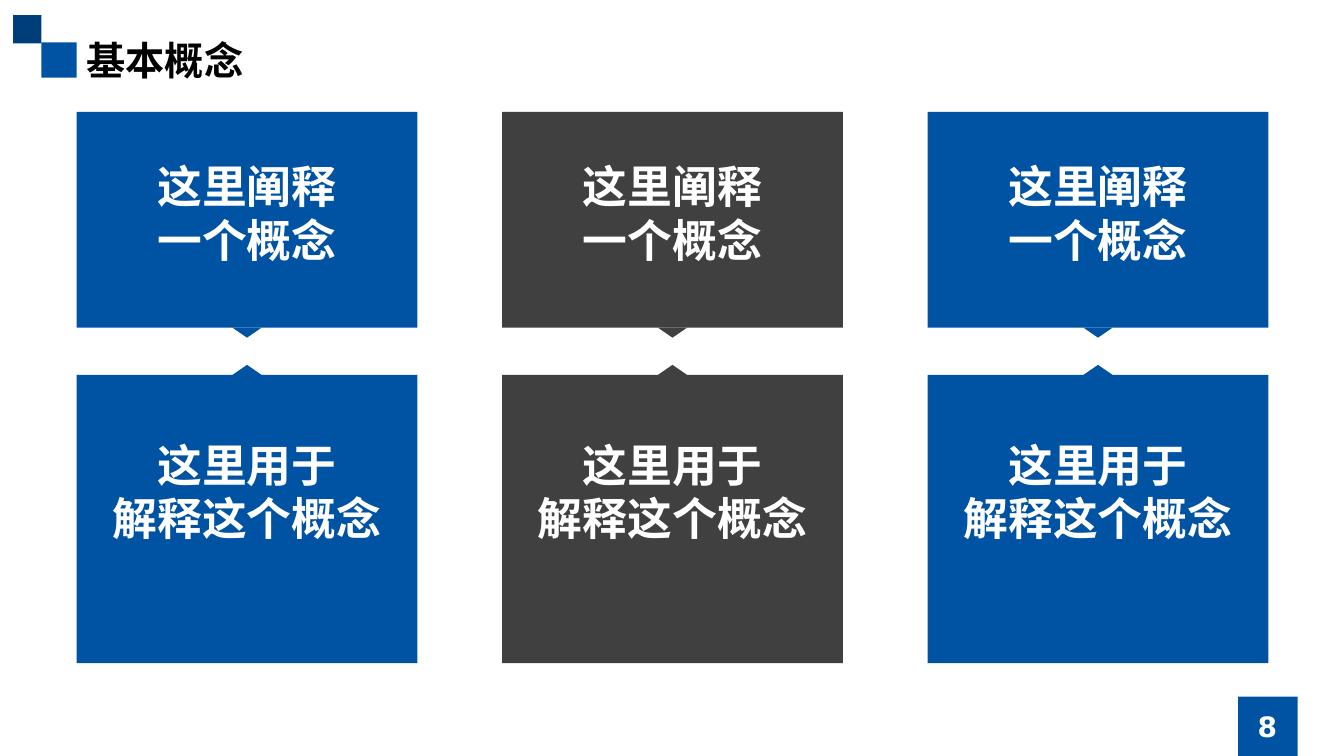
"""Build the basic concepts slide: three concept cards above three explanation cards."""
from dataclasses import dataclass

import pptx
import pptx.dml.color
import pptx.enum.shapes
import pptx.enum.text
import pptx.oxml.ns
import pptx.oxml.xmlchemy
import pptx.slide
import pptx.text.text
import pptx.util
from lxml import etree

Inches = pptx.util.Inches
RGBColor = pptx.dml.color.RGBColor
Shape = pptx.enum.shapes.MSO_SHAPE
Align = pptx.enum.text.PP_ALIGN
Anchor = pptx.enum.text.MSO_ANCHOR

BLUE = RGBColor(0x00, 0x53, 0xA3)
NAVY = RGBColor(0x00, 0x3E, 0x7A)
GRAY = RGBColor(0x40, 0x40, 0x40)
WHITE = RGBColor(0xFF, 0xFF, 0xFF)
BLACK = RGBColor(0x00, 0x00, 0x00)
CHINESE_FONT = "Noto Sans CJK SC"

COLUMN_LEFT, COLUMN_STEP, CARD_WIDTH = 0.76, 4.22, 3.38
POINTER_WIDTH, POINTER_HEIGHT = 0.29, 0.1
COLUMN_COLORS = (BLUE, GRAY, BLUE)


@dataclass(frozen=True)
class Box:
    left: float
    top: float
    width: float
    height: float

    def lengths(self) -> tuple[int, int, int, int]:
        return (Inches(self.left), Inches(self.top),
                Inches(self.width), Inches(self.height))


@dataclass(frozen=True)
class CardRow:
    top: float
    height: float
    pointer_top: float
    pointer_rotation: int
    text_top: float
    lines: tuple[str, ...]


@dataclass(frozen=True)
class TextStyle:
    size: int
    font: str
    color: RGBColor
    alignment: Align = Align.CENTER
    anchor: Anchor = Anchor.TOP


ROWS = (
    CardRow(1.11, 2.14, 3.25, 180, 1.53, ("这里阐释", "一个概念")),
    CardRow(3.72, 2.86, 3.62, 0, 4.29, ("这里用于", "解释这个概念")),
)
TITLE_STYLE = TextStyle(28, CHINESE_FONT, BLACK, Align.LEFT)
CARD_STYLE = TextStyle(32, "Arial", WHITE)
NUMBER_STYLE = TextStyle(20, "DejaVu Sans", WHITE, anchor=Anchor.MIDDLE)


def add_block(slide: pptx.slide.Slide, box: Box, color: RGBColor,
              kind: Shape = Shape.RECTANGLE, rotation: int = 0) -> None:
    shape = slide.shapes.add_shape(kind, *box.lengths())
    shape.rotation = rotation
    shape.shadow.inherit = False
    shape.fill.solid()
    shape.fill.fore_color.rgb = color
    shape.line.fill.background()


def write_lines(frame: pptx.text.text.TextFrame, lines: tuple[str, ...],
                style: TextStyle) -> None:
    frame.text = "\n".join(lines)
    frame.word_wrap = True
    frame.auto_size = pptx.enum.text.MSO_AUTO_SIZE.NONE
    frame.vertical_anchor = style.anchor
    for paragraph in frame.paragraphs:
        paragraph.alignment = style.alignment
        font = paragraph.font
        font.size = pptx.util.Pt(style.size)
        font.bold = True
        font.color.rgb = style.color
        font.name = style.font
        latin = paragraph._p.find(".//" + pptx.oxml.ns.qn("a:latin"))
        east_asian = etree.Element(pptx.oxml.ns.qn("a:ea"), typeface=CHINESE_FONT)
        latin.addnext(east_asian)


def add_text(slide: pptx.slide.Slide, box: Box, lines: tuple[str, ...],
             style: TextStyle) -> None:
    text_box = slide.shapes.add_textbox(*box.lengths())
    write_lines(text_box.text_frame, lines, style)


def add_title(slide: pptx.slide.Slide, box: Box, text: str) -> None:
    title = slide.shapes.title
    title.left, title.top, title.width, title.height = box.lengths()
    write_lines(title.text_frame, (text,), TITLE_STYLE)


def add_card(slide: pptx.slide.Slide, row: CardRow, left: float, color: RGBColor) -> None:
    pointer_left = left + (CARD_WIDTH - POINTER_WIDTH) / 2
    pointer = Box(pointer_left, row.pointer_top, POINTER_WIDTH, POINTER_HEIGHT)
    add_block(slide, Box(left, row.top, CARD_WIDTH, row.height), color)
    add_block(slide, pointer, color, Shape.ISOSCELES_TRIANGLE, row.pointer_rotation)
    add_text(slide, Box(left, row.text_top, CARD_WIDTH, 1.18), row.lines, CARD_STYLE)


def main() -> None:
    presentation = pptx.Presentation()
    presentation.slide_width = Inches(13.33)
    presentation.slide_height = Inches(7.5)
    slide = presentation.slides.add_slide(presentation.slide_layouts.get_by_name("Title Only"))

    add_title(slide, Box(0.76, 0.31, 5.91, 0.57), "基本概念")
    add_block(slide, Box(0.41, 0.42, 0.35, 0.35), BLUE)
    add_block(slide, Box(0.13, 0.15, 0.28, 0.28), NAVY)
    add_block(slide, Box(12.28, 6.91, 0.59, 0.59), BLUE)
    add_text(slide, Box(11.81, 7.01, 1.52, 0.4), ("8",), NUMBER_STYLE)

    for column, color in enumerate(COLUMN_COLORS):
        for row in ROWS:
            add_card(slide, row, COLUMN_LEFT + column * COLUMN_STEP, color)

    presentation.save("out.pptx")


if __name__ == "__main__":
    main()
